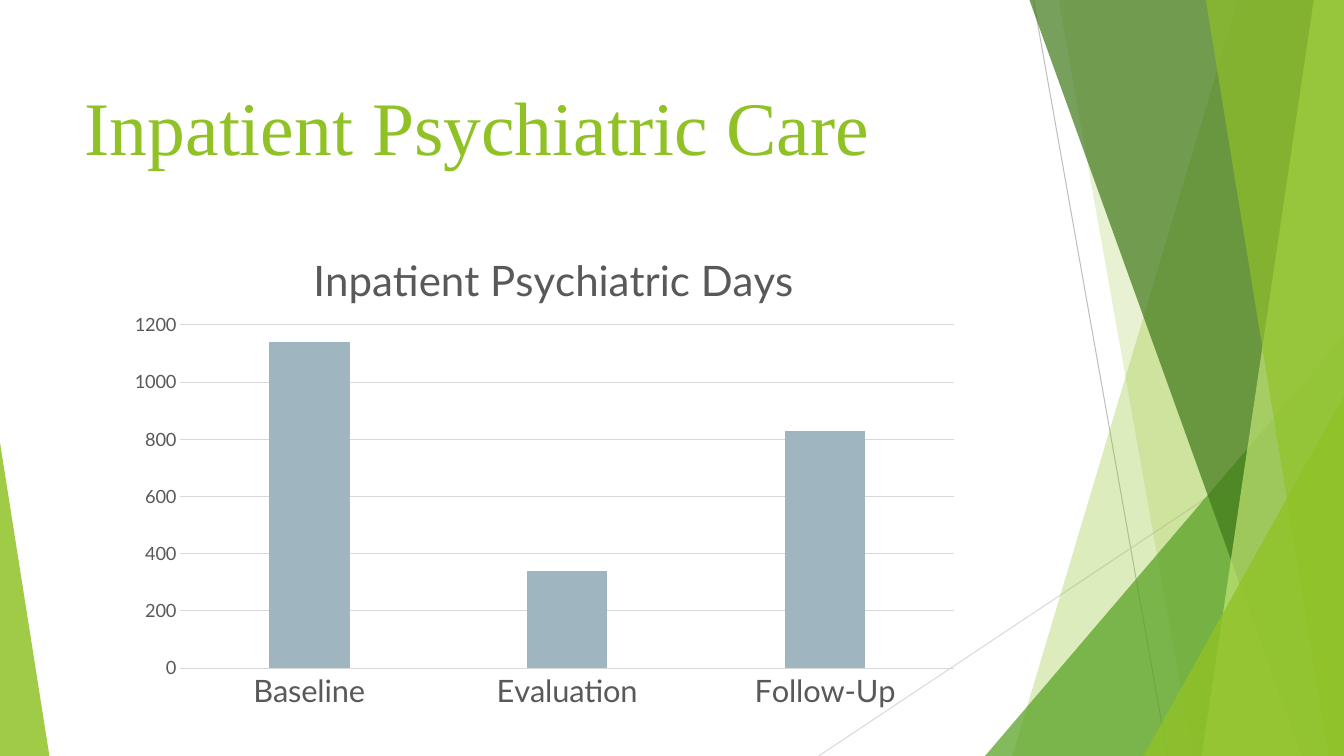
import pptx
import pptx.util
import pptx.dml.color
import pptx.chart.data
import pptx.enum.chart
import pptx.enum.shapes
import pptx.enum.text
import pptx.oxml
import pptx.oxml.ns

Inches, Pt = pptx.util.Inches, pptx.util.Pt
RGB = pptx.dml.color.RGBColor
qn = pptx.oxml.ns.qn

LIME = RGB(0x90, 0xC2, 0x26)
GREEN = RGB(0x54, 0xA0, 0x21)
DARK = RGB(0x3F, 0x78, 0x19)
PALE = RGB(0xC0, 0xE4, 0x74)
STEEL = RGB(0x9F, 0xB6, 0xC0)
GREY = RGB(0x59, 0x59, 0x59)
MID = RGB(0xBF, 0xBF, 0xBF)
LIGHT = RGB(0xD9, 0xD9, 0xD9)
W, H = 13.33, 7.5

deck = pptx.Presentation()
deck.slide_width, deck.slide_height = Inches(W), Inches(H)
slide = deck.slides.add_slide(deck.slide_layouts[5])
shapes = slide.shapes


def paint(shape, color, alpha):
    """Fill a shape with a see-through colour; alpha is in percent."""
    shape.shadow.inherit = False
    shape.fill.solid()
    shape.fill.fore_color.rgb = color
    shape.line.fill.background()
    tint = shape.fill._xPr.find(".//" + qn("a:srgbClr"))
    tint.append(pptx.oxml.parse_xml(
        f'<a:alpha {pptx.oxml.ns.nsdecls("a")} val="{alpha * 1000}"/>'))


def place(parent, index, **spots):
    """Give a chart part a fixed place, in shares of the chart."""
    for old in parent.findall(qn("c:layout")):
        parent.remove(old)
    inner = '<c:layoutTarget val="inner"/>' if "w" in spots else ""
    modes = "".join(f'<c:{k}Mode val="edge"/>' for k in "xy")
    vals = "".join(f'<c:{k} val="{v}"/>' for k, v in spots.items())
    parent.insert(index, pptx.oxml.parse_xml(
        f'<c:layout {pptx.oxml.ns.nsdecls("c")}><c:manualLayout>'
        f'{inner}{modes}{vals}</c:manualLayout></c:layout>'))


# Thin lines behind the bands
for x1, y1, x2, y2, color in ((10.25, 0, 11.58, H, MID), (W, 4.03, 8.12, H, LIGHT)):
    line = shapes.add_connector(pptx.enum.shapes.MSO_CONNECTOR.STRAIGHT,
                                Inches(x1), Inches(y1), Inches(x2), Inches(y2))
    line.line.color.rgb = color
    line.line.width = Pt(0.75)
    line._element.spPr.append(pptx.oxml.parse_xml(
        f'<a:effectLst {pptx.oxml.ns.nsdecls("a")}/>'))

# Bands reach the right edge: (top x, bottom x); wedges: (left, top, width, apex)
bands = (
    ("band", (12.28, 10.04), LIME, 30),
    ("band", (10.5, 11.83), LIME, 20),
    ("wedge", (9.77, 3.33, 3.56, 1), GREEN, 72),
    ("band", (10.21, 12.91), DARK, 70),
    ("band", (13.03, 11.92), PALE, 70),
    ("band", (11.96, 13.18), LIME, 65),
    ("wedge", (11.34, 3.93, 1.99, 1), LIME, 80),
    ("wedge", (0, 4.39, 0.49, 0), LIME, 85),
)
for kind, spots, color, alpha in bands:
    if kind == "band":
        top, low = spots
        pen = shapes.build_freeform(Inches(top), 0)
        pen.add_line_segments([(Inches(x), Inches(y)) for x, y in
                               ((W, 0), (W, H), (low, H))], close=True)
        shape = pen.convert_to_shape()
    else:
        left, top, wide, apex = spots
        shape = shapes.add_shape(pptx.enum.shapes.MSO_SHAPE.ISOSCELES_TRIANGLE,
                                 Inches(left), Inches(top), Inches(wide), Inches(H - top))
        shape.adjustments[0] = apex
    paint(shape, color, alpha)

# Title
title = shapes.title
title.left, title.top, title.width, title.height = map(Inches, (0.74, 0.67, 9.4, 1.44))
frame = title.text_frame
frame.word_wrap = True
frame.vertical_anchor = pptx.enum.text.MSO_ANCHOR.TOP
frame.margin_top = Inches(0.12)
para = frame.paragraphs[0]
para.alignment = pptx.enum.text.PP_ALIGN.LEFT
run = para.add_run()
run.text = "Inpatient Psychiatric Care"
run.font.name, run.font.size = "Times New Roman", Pt(54)
run.font.color.rgb = LIME

# Chart
data = pptx.chart.data.CategoryChartData()
data.categories = ["Baseline", "Evaluation", "Follow-Up"]
data.add_series("Series 1", (1140, 340, 830))
chart = shapes.add_chart(pptx.enum.chart.XL_CHART_TYPE.COLUMN_CLUSTERED,
                         Inches(1.17), Inches(2.11), Inches(8.47), Inches(5.02), data).chart
chart.font.name, chart.font.size = "Lato", Pt(10)
chart.has_legend = False
chart.has_title = True
run = chart.chart_title.text_frame.paragraphs[0].add_run()
run.text = "Inpatient Psychiatric Days"
run.font.name, run.font.size, run.font.bold = "Lato", Pt(30), False
run.font.color.rgb = GREY
chart.chart_title.include_in_layout = False
place(chart.chart_title._element, 1, x=0.22, y=0.06)
place(chart._chartSpace.chart.plotArea, 0, x=0.073, y=0.222, w=0.906, h=0.678)

plot = chart.plots[0]
plot.gap_width, plot.overlap, plot.vary_by_categories = 219, -27, False
bars = plot.series[0]
bars.format.fill.solid()
bars.format.fill.fore_color.rgb = STEEL

cat, val = chart.category_axis, chart.value_axis
for axis, size in ((cat, 22), (val, 13)):
    axis.major_tick_mark = axis.minor_tick_mark = pptx.enum.chart.XL_TICK_MARK.NONE
    font = axis.tick_labels.font
    font.name, font.size = "Lato", Pt(size)
    font.color.rgb = GREY
val.minimum_scale, val.maximum_scale, val.major_unit = 0, 1200, 200
val.format.line.fill.background()
val.has_major_gridlines = True
for line in (cat.format.line, val.major_gridlines.format.line):
    line.color.rgb = LIGHT
    line.width = Pt(0.75)

deck.save("out.pptx")
